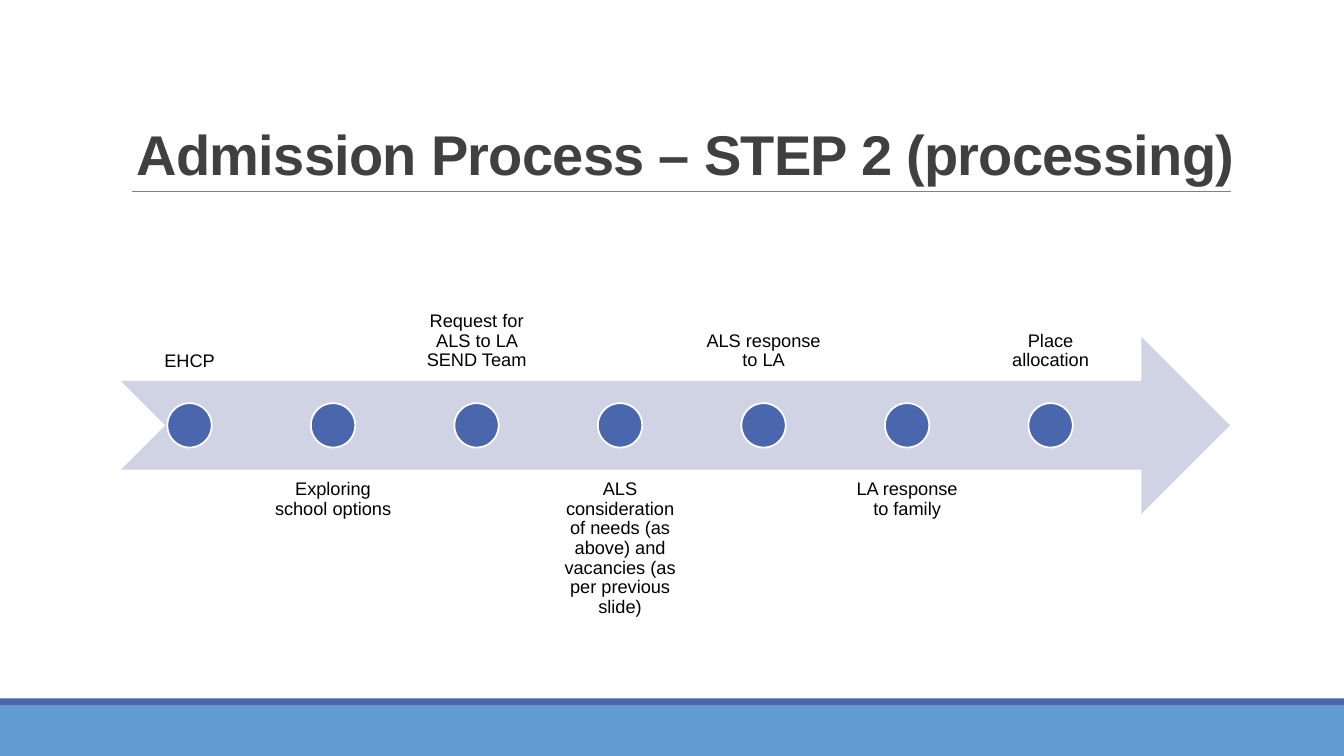
from dataclasses import dataclass

from pptx import Presentation
from pptx.dml.color import RGBColor
from pptx.enum.shapes import MSO_CONNECTOR, MSO_SHAPE as Shape
from pptx.enum.text import MSO_ANCHOR as Anchor, PP_ALIGN as Align
from pptx.oxml.ns import qn
from pptx.util import Inches, Pt
from lxml.etree import SubElement

FONT = "Arial"
BLUE = "4A66AC"
LIGHT_BLUE = "629DD1"
PALE_BLUE = "D0D3E3"

# Timeline measures, in inches
FIRST_LEFT, LAST_LEFT = 1.2, 9.74
LABEL_WIDTH, LABEL_HEIGHT = 1.36, 1.76
ABOVE_TOP, BELOW_TOP = 2.02, 4.66
DOT_SIZE, DOT_TOP = 0.44, 4.0

STEPS = [
    "EHCP",
    "Exploring school options",
    "Request for ALS to LA SEND Team",
    "ALS consideration of needs (as above) and vacancies (as per previous slide)",
    "ALS response to LA",
    "LA response to family",
    "Place allocation",
]


@dataclass
class Box:
    left: float
    top: float
    width: float
    height: float

    def lengths(self) -> list:
        return [Inches(v) for v in (self.left, self.top, self.width, self.height)]


@dataclass
class TextStyle:
    size: float
    color: str
    line_spacing: float
    anchor: Anchor
    bold: bool = False
    margin: float = 0.1
    vertical_margin: float = 0.1
    tracking: int = 0  # hundredths of a point


def rgb(color: str) -> RGBColor:
    return RGBColor.from_string(color)


def add_filled(slide, kind: Shape, box: Box, fill: str, outline: str = "") -> None:
    shape = slide.shapes.add_shape(kind, *box.lengths())
    shape.shadow.inherit = False
    shape.fill.solid()
    shape.fill.fore_color.rgb = rgb(fill)
    if outline:
        shape.line.color.rgb = rgb(outline)
        shape.line.width = Pt(1.25)
    else:
        shape.line.fill.background()


def add_text(slide, box: Box, text: str, style: TextStyle) -> None:
    frame = slide.shapes.add_textbox(*box.lengths()).text_frame
    frame.word_wrap = True
    frame.vertical_anchor = style.anchor
    frame.margin_left = frame.margin_right = Inches(style.margin)
    frame.margin_top = frame.margin_bottom = Inches(style.vertical_margin)
    paragraph = frame.paragraphs[0]
    paragraph.alignment = Align.CENTER
    paragraph.line_spacing = style.line_spacing
    run = paragraph.add_run()
    run.text = text
    font = paragraph.font
    font.name, font.size, font.bold = FONT, Pt(style.size), style.bold
    font.color.rgb = rgb(style.color)
    if style.tracking:
        run.font._element.set("spc", str(style.tracking))


def add_rule(slide, left: float, right: float, y: float) -> None:
    rule = slide.shapes.add_connector(
        MSO_CONNECTOR.STRAIGHT, Inches(left), Inches(y), Inches(right), Inches(y))
    rule.line.color.rgb = rgb("808080")
    rule.line.width = Pt(0.5)
    SubElement(rule._element.spPr, qn("a:effectLst"))


def add_step(slide, index: int, text: str) -> None:
    left = FIRST_LEFT + index * (LAST_LEFT - FIRST_LEFT) / (len(STEPS) - 1)
    above = index % 2 == 0
    label = Box(left, ABOVE_TOP if above else BELOW_TOP, LABEL_WIDTH, LABEL_HEIGHT)
    anchor = Anchor.BOTTOM if above else Anchor.TOP
    add_text(slide, label, text, TextStyle(13, "000000", 0.9, anchor))
    dot = Box(left + (LABEL_WIDTH - DOT_SIZE) / 2, DOT_TOP, DOT_SIZE, DOT_SIZE)
    add_filled(slide, Shape.OVAL, dot, BLUE, "FFFFFF")


def main() -> None:
    presentation = Presentation()
    presentation.slide_width = Inches(13.33)
    presentation.slide_height = Inches(7.5)
    slide = presentation.slides.add_slide(presentation.slide_layouts[6])

    # Footer bands
    add_filled(slide, Shape.RECTANGLE, Box(0, 7, 13.33, 0.5), LIGHT_BLUE)
    add_filled(slide, Shape.RECTANGLE, Box(0, 6.93, 13.33, 0.07), BLUE)

    # Title and rule
    add_rule(slide, 1.31, 12.21, 1.9)
    title_style = TextStyle(40, "404040", 0.85, Anchor.BOTTOM, bold=True,
                            vertical_margin=0.05, tracking=-50)
    add_text(slide, Box(1.2, 0.31, 11.2, 1.59),
             "Admission Process – STEP 2 (processing)", title_style)

    # Timeline arrow and steps
    add_filled(slide, Shape.NOTCHED_RIGHT_ARROW, Box(1.2, 3.34, 11, 1.76), PALE_BLUE)
    for index, text in enumerate(STEPS):
        add_step(slide, index, text)

    presentation.save("out.pptx")


if __name__ == "__main__":
    main()
